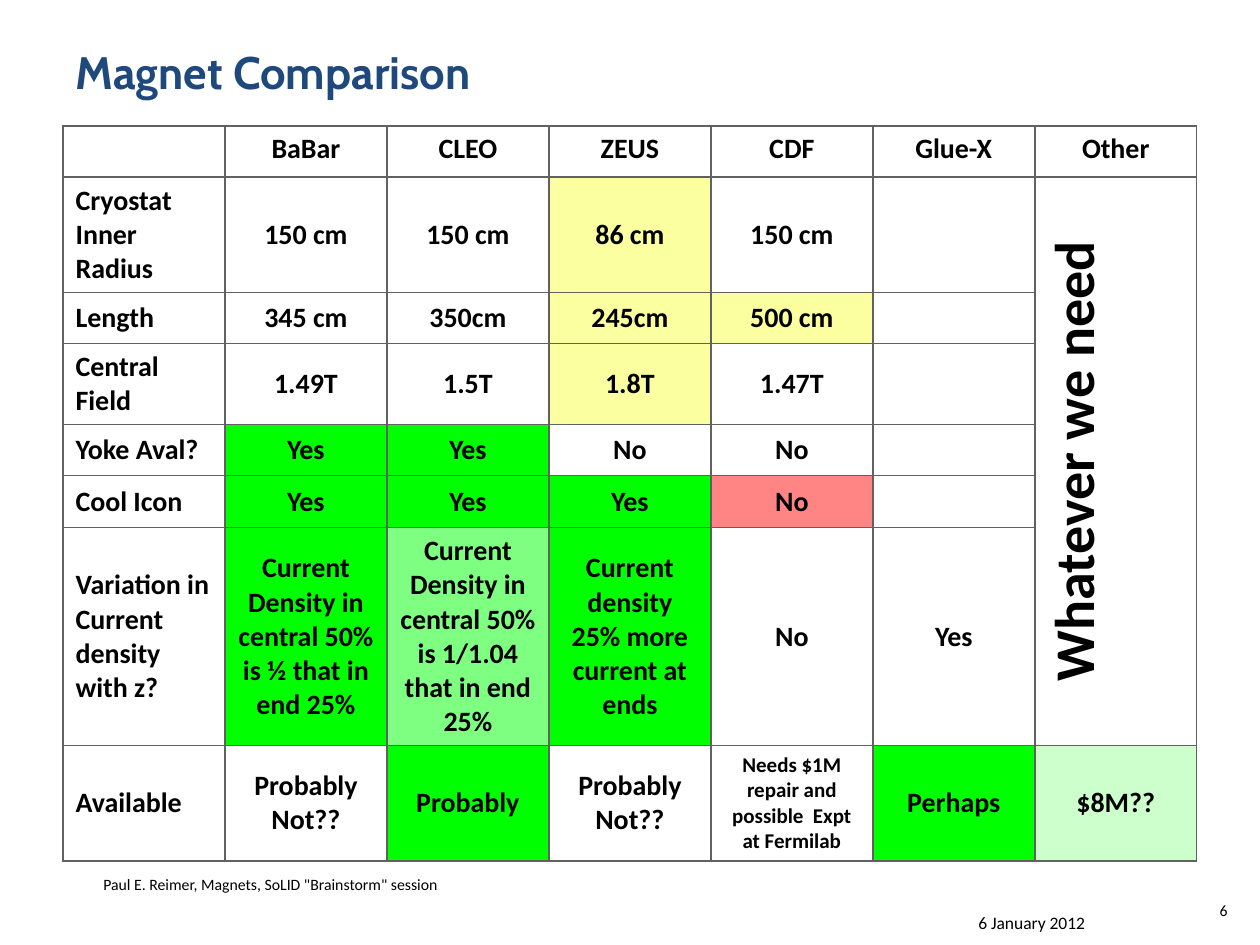
from lxml.etree import SubElement
from pptx import Presentation
from pptx.dml.color import RGBColor
from pptx.enum.text import MSO_ANCHOR, PP_ALIGN
from pptx.oxml.ns import qn
from pptx.util import Emu, Pt

PIXEL = 914400 // 126

BLACK = RGBColor(0x00, 0x00, 0x00)
NAVY = RGBColor(0x1F, 0x49, 0x7D)
BORDER_GRAY = RGBColor(0x61, 0x61, 0x61)
YELLOW = RGBColor(0xFB, 0xFF, 0x9F)
GREEN = RGBColor(0x00, 0xFF, 0x00)
LIGHT_GREEN = RGBColor(0x7E, 0xFF, 0x81)
PALE_GREEN = RGBColor(0xCC, 0xFF, 0xCC)
RED = RGBColor(0xFF, 0x84, 0x84)

COLUMN_WIDTH = 162
ROW_HEIGHTS = [51, 115, 51, 81, 51, 52, 218, 115]
ROWS = [
    ["", "BaBar", "CLEO", "ZEUS", "CDF", "Glue-X", "Other"],
    ["Cryostat Inner Radius", "150 cm", "150 cm", "86 cm", "150 cm", "",
     "Whatever we need"],
    ["Length", "345 cm", "350cm", "245cm", "500 cm", "", ""],
    ["Central Field", "1.49T", "1.5T", "1.8T", "1.47T", "", ""],
    ["Yoke Aval?", "Yes", "Yes", "No", "No", "", ""],
    ["Cool Icon", "Yes", "Yes", "Yes", "No", "", ""],
    ["Variation in Current density with z?",
     "Current Density in central 50% is ½ that in end 25%",
     "Current Density in central 50% is 1/1.04 that in end 25%",
     "Current density 25% more current at ends", "No", "Yes", ""],
    ["Available", "Probably Not??", "Probably", "Probably Not??",
     "Needs $1M repair and possible  Expt at Fermilab", "Perhaps", "$8M??"],
]
# Highlighted cells as (row, column)
HIGHLIGHTS = {
    YELLOW: [(1, 3), (2, 3), (2, 4), (3, 3)],
    GREEN: [(4, 1), (4, 2), (5, 1), (5, 2), (5, 3), (6, 1), (6, 3),
            (7, 2), (7, 5)],
    LIGHT_GREEN: [(6, 2)],
    PALE_GREEN: [(7, 6)],
    RED: [(5, 4)],
}
CELL_FILLS = {place: color for color, places in HIGHLIGHTS.items()
              for place in places}
VERTICAL_CELL = (1, 6)
FONT_SIZES = {VERTICAL_CELL: 32, (7, 4): 12}


def px(length):
    return Emu(length * PIXEL)


def place(shape, left, top, width, height):
    shape.left, shape.top = px(left), px(top)
    shape.width, shape.height = px(width), px(height)


def format_text(text_frame, size, color=BLACK, font_name="Calibri",
                bold=False, alignment=PP_ALIGN.LEFT):
    for paragraph in text_frame.paragraphs:
        paragraph.alignment = alignment
        for run in paragraph.runs:
            run.font.name = font_name
            run.font.size = Pt(size)
            run.font.bold = bold
            run.font.color.rgb = color


def add_title(slide, text):
    title = slide.shapes.title
    place(title, 63, 38, 1134, 158)
    title.text_frame.text = text
    title.text_frame.vertical_anchor = MSO_ANCHOR.TOP
    format_text(title.text_frame, 26, NAVY, "Cabin", bold=True)


def add_label(slide, text, box, size, alignment=PP_ALIGN.LEFT):
    label = slide.shapes.add_textbox(*map(px, box))
    label.text_frame.word_wrap = True
    label.text_frame.text = text
    format_text(label.text_frame, size, alignment=alignment)


def set_borders(cell):
    properties = cell._tc.get_or_add_tcPr()
    for index, side in enumerate(("a:lnL", "a:lnR", "a:lnT", "a:lnB")):
        line = SubElement(properties, qn(side), w=str(Pt(1)))
        fill = SubElement(line, qn("a:solidFill"))
        SubElement(fill, qn("a:srgbClr"), val=str(BORDER_GRAY))
        # Borders come before the cell fill
        properties.insert(index, line)


def fill_cell(cell, row, column, text):
    cell.text_frame.text = text
    alignment = PP_ALIGN.CENTER if column else PP_ALIGN.LEFT
    size = FONT_SIZES.get((row, column), 16)
    format_text(cell.text_frame, size, bold=True, alignment=alignment)
    if row:
        cell.vertical_anchor = MSO_ANCHOR.MIDDLE
    if (row, column) in CELL_FILLS:
        cell.fill.solid()
        cell.fill.fore_color.rgb = CELL_FILLS[row, column]
    else:
        cell.fill.background()
    set_borders(cell)


def add_comparison_table(slide):
    columns = len(ROWS[0])
    table = slide.shapes.add_table(
        len(ROWS), columns, px(63), px(126),
        px(columns * COLUMN_WIDTH), px(sum(ROW_HEIGHTS))).table
    table.first_row = False
    table.horz_banding = False
    for column in table.columns:
        column.width = px(COLUMN_WIDTH)
    for row, height in zip(table.rows, ROW_HEIGHTS):
        row.height = px(height)
    for row, texts in enumerate(ROWS):
        for column, text in enumerate(texts):
            fill_cell(table.cell(row, column), row, column, text)

    # Tall merged cell with text reading upwards
    tall_cell = table.cell(*VERTICAL_CELL)
    tall_cell.merge(table.cell(6, 6))
    tall_cell._tc.get_or_add_tcPr().set("vert", "vert270")


def main():
    presentation = Presentation()
    presentation.slide_width = px(1260)
    presentation.slide_height = px(945)
    slide = presentation.slides.add_slide(presentation.slide_layouts[5])

    add_title(slide, "Magnet Comparison")
    add_comparison_table(slide)

    # Footer
    add_label(slide, "6 January 2012", (966, 906, 189, 29), 10)
    add_label(slide, 'Paul E. Reimer, Magnets, SoLID "Brainstorm" session',
              (91, 869, 819, 32), 9)
    add_label(slide, "6", (1187, 895, 53, 50), 9, PP_ALIGN.RIGHT)

    presentation.save("out.pptx")


if __name__ == "__main__":
    main()
